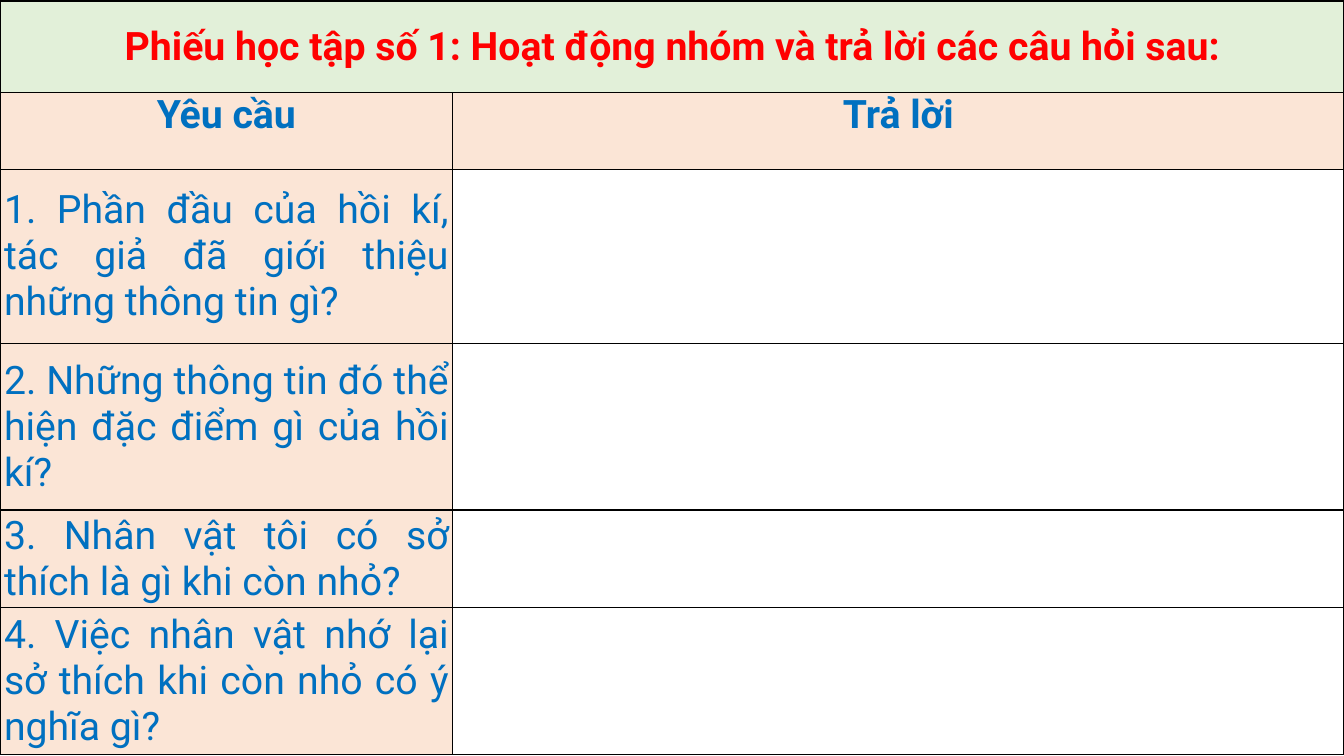
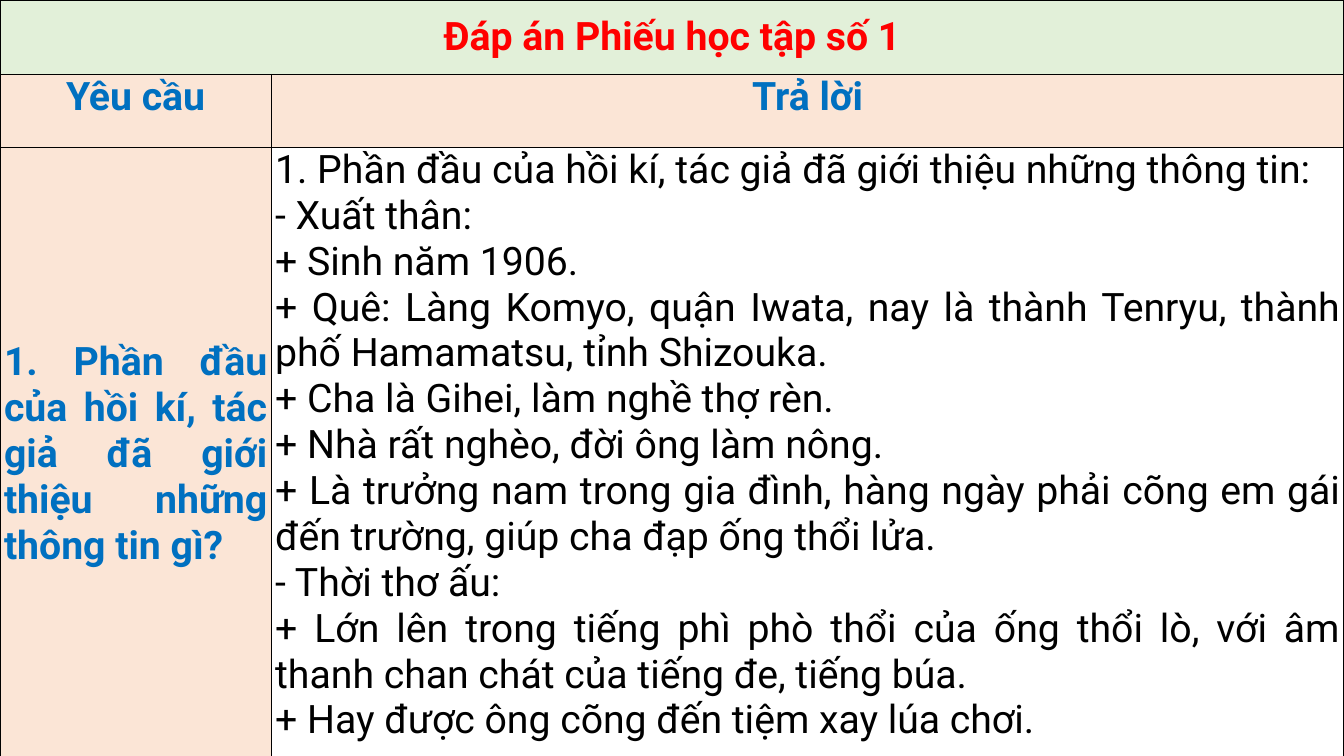
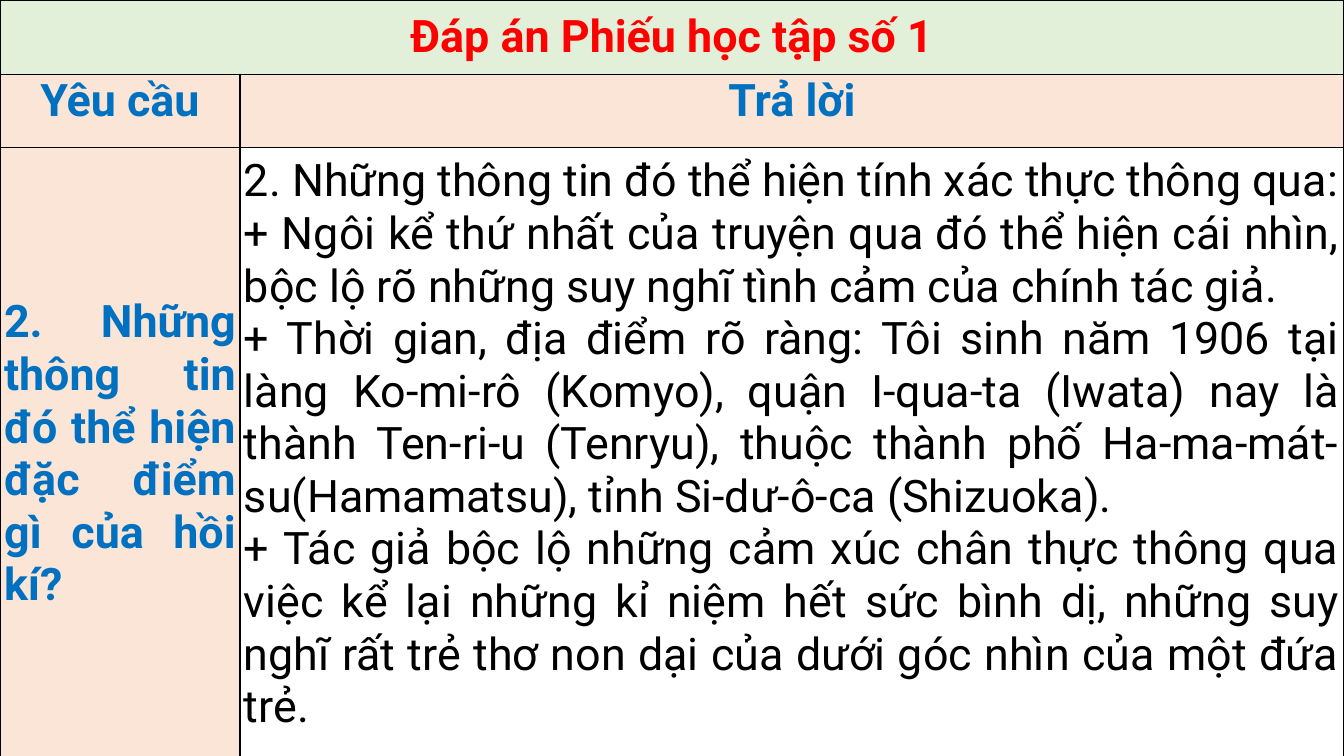
from dataclasses import dataclass

from lxml.etree import SubElement
from pptx import Presentation
from pptx.dml.color import RGBColor
from pptx.enum.text import MSO_ANCHOR, PP_ALIGN
from pptx.oxml.ns import qn
from pptx.slide import Slide
from pptx.table import _Cell
from pptx.util import Inches, Pt

FONT = "Roboto"
RED, BLUE, BLACK, WHITE = "FF0000", "0070C0", "000000", "FFFFFF"
GREEN_BAND, PEACH = "E2F0D9", "FBE5D6"
SLIDE_WIDTH = 13.33
HEADINGS = ("Yêu cầu", "Trả lời")


@dataclass(frozen=True)
class TextStyle:
    color: str
    bold: bool = False
    align: PP_ALIGN = PP_ALIGN.JUSTIFY
    anchor: MSO_ANCHOR = MSO_ANCHOR.MIDDLE


TITLE = TextStyle(RED, True, PP_ALIGN.CENTER)
HEADING = TextStyle(BLUE, True, PP_ALIGN.CENTER, MSO_ANCHOR.TOP)
QUESTION = TextStyle(BLUE)
ANSWERED_QUESTION = TextStyle(BLUE, True)
ANSWER = TextStyle(BLACK, anchor=MSO_ANCHOR.TOP)


@dataclass(frozen=True)
class Entry:
    question: str
    height: float
    answer: tuple[str, ...] = ()


@dataclass(frozen=True)
class Worksheet:
    title: str
    question_width: float
    title_height: float
    heading_height: float
    entries: tuple[Entry, ...]
    size: int = 28
    top: float = 0
    answer_inset: float = 0


WORKSHEETS = (
    Worksheet(
        "Phiếu học tập số 1: Hoạt động nhóm và trả lời các câu hỏi sau:",
        4.49, 0.91, 0.76,
        (
            Entry("1. Phần đầu của hồi kí, tác giả đã giới thiệu những thông tin gì?", 1.73),
            Entry("2. Những thông tin đó thể hiện đặc điểm gì của hồi kí?", 1.65),
            Entry("3. Nhân vật tôi có sở thích là gì khi còn nhỏ?", 0.97),
            Entry("4. Việc nhân vật nhớ lại sở thích khi còn nhỏ có ý nghĩa gì?", 1.46),
        ),
        top=0.01,
    ),
    Worksheet(
        "Đáp án Phiếu học tập số 1",
        2.69, 0.74, 0.72,
        (
            Entry(
                "1. Phần đầu của hồi kí, tác giả đã giới thiệu những thông tin gì?",
                6.09,
                (
                    "1. Phần đầu của hồi kí, tác giả đã giới thiệu những thông tin:",
                    "- Xuất thân:",
                    "+ Sinh năm 1906.",
                    "+ Quê: Làng Komyo, quận Iwata, nay là thành Tenryu, thành phố Hamamatsu, tỉnh Shizouka.",
                    "+ Cha là Gihei, làm nghề thợ rèn.",
                    "+ Nhà rất nghèo, đời ông làm nông.",
                    "+ Là trưởng nam trong gia đình, hàng ngày phải cõng em gái đến trường, giúp cha đạp ống thổi lửa.",
                    "- Thời thơ ấu:",
                    "+ Lớn lên trong tiếng phì phò thổi của ống thổi lò, với âm thanh chan chát của tiếng đe, tiếng búa.",
                    "+ Hay được ông cõng đến tiệm xay lúa chơi.",
                ),
            ),
        ),
    ),
    Worksheet(
        "Đáp án Phiếu học tập số 1",
        2.38, 0.74, 0.72,
        (
            Entry(
                "2. Những thông tin đó thể hiện đặc điểm gì của hồi kí?",
                6.09,
                (
                    "2. Những thông tin đó thể hiện tính xác thực thông qua:",
                    "+ Ngôi kể thứ nhất của truyện qua đó thể hiện cái nhìn, bộc lộ rõ những suy nghĩ tình cảm của chính tác giả.",
                    "+ Thời gian, địa điểm rõ ràng: Tôi sinh năm 1906 tại làng Ko-mi-rô (Komyo), quận I-qua-ta (Iwata) nay là thành Ten-ri-u (Tenryu), thuộc thành phố Ha-ma-mát-su(Hamamatsu), tỉnh Si-dư-ô-ca (Shizuoka).",
                    "+ Tác giả bộc lộ những cảm xúc chân thực thông qua việc kể lại những kỉ niệm hết sức bình dị, những suy nghĩ rất trẻ thơ non dại của dưới góc nhìn của một đứa trẻ.",
                ),
            ),
        ),
        size=32,
        answer_inset=0.08,
    ),
)


def rgb(color: str) -> RGBColor:
    return RGBColor.from_string(color)


def paint_cell(cell: _Cell, color: str) -> None:
    properties = cell._tc.get_or_add_tcPr()
    for side in ("lnL", "lnR", "lnT", "lnB"):
        border = SubElement(properties, qn(f"a:{side}"), w=str(Pt(1)))
        solid = SubElement(border, qn("a:solidFill"))
        SubElement(solid, qn("a:srgbClr"), val=BLACK)
    cell.fill.solid()
    cell.fill.fore_color.rgb = rgb(color)


def write_cell(cell: _Cell, text: str, style: TextStyle, size: int, inset: float = 0) -> None:
    cell.margin_left = cell.margin_right = Inches(0.04)
    cell.margin_top, cell.margin_bottom = Inches(inset), Inches(0)
    cell.vertical_anchor = style.anchor
    cell.text_frame.text = text
    for paragraph in cell.text_frame.paragraphs:
        paragraph.alignment = style.align
        for run in paragraph.runs:
            run.font.name = FONT
            run.font.size = Pt(size)
            run.font.bold = style.bold
            run.font.color.rgb = rgb(style.color)


def draw_worksheet(slide: Slide, sheet: Worksheet) -> None:
    heights = [sheet.title_height, sheet.heading_height, *(entry.height for entry in sheet.entries)]
    widths = (sheet.question_width, SLIDE_WIDTH - sheet.question_width)
    table = slide.shapes.add_table(
        len(heights), len(widths),
        Inches(0), Inches(sheet.top), Inches(SLIDE_WIDTH), Inches(sum(heights)),
    ).table
    table.first_row = table.horz_banding = False
    for column, width in zip(table.columns, widths):
        column.width = Inches(width)
    for index, (row, height) in enumerate(zip(table.rows, heights)):
        row.height = Inches(height)
        fills = {0: (GREEN_BAND, GREEN_BAND), 1: (PEACH, PEACH)}.get(index, (PEACH, WHITE))
        for cell, fill in zip(row.cells, fills):
            paint_cell(cell, fill)

    table.cell(0, 0).merge(table.cell(0, 1))
    write_cell(table.cell(0, 0), sheet.title, TITLE, sheet.size)
    for column, heading in enumerate(HEADINGS):
        write_cell(table.cell(1, column), heading, HEADING, sheet.size)
    for row, entry in enumerate(sheet.entries, start=2):
        question_style = ANSWERED_QUESTION if entry.answer else QUESTION
        write_cell(table.cell(row, 0), entry.question, question_style, sheet.size)
        if entry.answer:
            answer = "\n".join(entry.answer)
            write_cell(table.cell(row, 1), answer, ANSWER, sheet.size, sheet.answer_inset)


def main() -> None:
    presentation = Presentation()
    presentation.slide_width = Inches(SLIDE_WIDTH)
    presentation.slide_height = Inches(7.5)
    blank = presentation.slide_layouts[6]
    for sheet in WORKSHEETS:
        draw_worksheet(presentation.slides.add_slide(blank), sheet)
    presentation.save("out.pptx")


if __name__ == "__main__":
    main()
